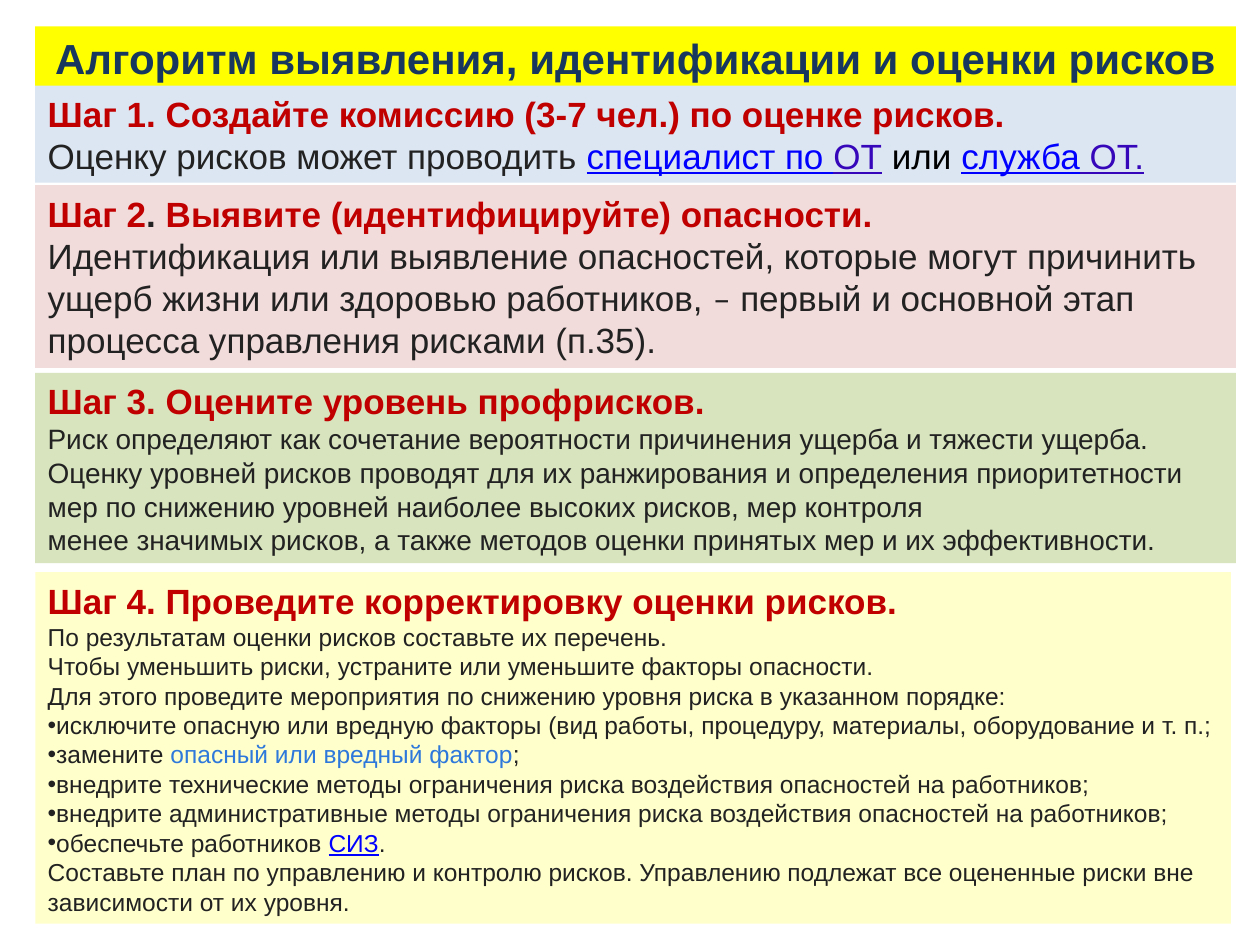
"""Build a slide listing the four steps of occupational risk assessment."""
from lxml import etree
from pptx import Presentation
from pptx.dml.color import RGBColor
from pptx.enum.shapes import MSO_SHAPE
from pptx.enum.text import MSO_ANCHOR, MSO_AUTO_SIZE, PP_ALIGN
from pptx.oxml.ns import qn
from pptx.util import Inches, Pt

RECT = MSO_SHAPE.RECTANGLE
MIDDLE = MSO_ANCHOR.MIDDLE
GROW = MSO_AUTO_SIZE.SHAPE_TO_FIT_TEXT
LEFT, CENTER = PP_ALIGN.LEFT, PP_ALIGN.CENTER

BASE = {"name": "Arial", "bold": False, "underline": False, "color": "222222"}
TITLE = {"size": Pt(24), "bold": True, "color": "17375E"}
HEAD = {"size": Pt(20), "bold": True, "color": "C00000"}
HEAD_DOT = {**HEAD, "color": "222222"}
BIG = {"size": Pt(20)}
BLACK = {**BIG, "color": "000000"}
DASH = {**BIG, "name": "Calibri"}
LINK = {**BIG, "color": "0000FF", "underline": True}
VISITED = {**LINK, "color": "3506BA"}
MEDIUM = {"size": Pt(16)}
SMALL = {"size": Pt(14)}
SMALL_BLUE = {**SMALL, "color": "2D78DA"}
SMALL_LINK = {**LINK, **SMALL}

TITLE_TEXT = [[("Алгоритм выявления, идентификации и оценки рисков", TITLE)]]
STEP_1 = [
    [("Шаг 1. Создайте комиссию (3-7 чел.) по оценке рисков.", HEAD)],
    [("Оценку рисков может проводить ", BIG), ("специалист по ", LINK), ("ОТ", VISITED),
     (" или ", BLACK), ("служба", LINK), (" ОТ.", VISITED)],
]
STEP_2 = [
    [("Шаг 2", HEAD), (". ", HEAD_DOT), ("Выявите (идентифицируйте) опасности.", HEAD)],
    [("Идентификация или выявление опасностей, которые могут причинить "
      "ущерб жизни или здоровью работников, ", BIG), ("–", DASH),
     (" первый и основной этап процесса управления рисками (п.35).", BIG)],
]
STEP_3 = [
    [("Шаг 3. Оцените уровень профрисков.", HEAD)],
    [("Риск определяют как сочетание вероятности причинения ущерба и тяжести ущерба.", MEDIUM)],
    [("Оценку уровней рисков проводят для их ранжирования и определения приоритетности "
      "мер по снижению уровней наиболее высоких рисков, мер контроля", MEDIUM)],
    [("менее значимых рисков, а также методов оценки принятых мер и их эффективности.", MEDIUM)],
]
STEP_4 = [
    [("Шаг 4. Проведите корректировку оценки рисков.", HEAD)],
    [("По результатам оценки рисков составьте их перечень.", SMALL)],
    [("Чтобы уменьшить риски, устраните или уменьшите факторы опасности.", SMALL)],
    [("Для этого проведите мероприятия по снижению уровня риска в указанном порядке:", SMALL)],
    [("исключите опасную или вредную факторы (вид работы, процедуру, материалы, "
      "оборудование и т. п.;", SMALL)],
    [("замените ", SMALL), ("опасный или вредный фактор", SMALL_BLUE), (";", SMALL)],
    [("внедрите технические методы ограничения риска воздействия опасностей "
      "на работников;", SMALL)],
    [("внедрите административные методы ограничения риска воздействия опасностей "
      "на работников;", SMALL)],
    [("обеспечьте работников ", SMALL), ("СИЗ", SMALL_LINK), (".", SMALL)],
    [("Составьте план по управлению и контролю рисков. Управлению подлежат "
      "все оцененные риски вне зависимости от их уровня.", SMALL)],
]

# top, width, height, fill, alignment, paragraphs, bulleted paragraphs
BANDS = [
    (0.21, 9.53, 0.5, "FFFF00", CENTER, TITLE_TEXT, ()),
    (1.47, 9.53, 1.45, "F2DCDB", LEFT, STEP_2, ()),
    (2.96, 9.53, 1.51, "D7E4BD", LEFT, STEP_3, ()),
    (4.54, 9.49, 2.79, "FFFFCC", LEFT, STEP_4, range(4, 9)),
    (0.68, 9.53, 0.77, "DCE6F2", LEFT, STEP_1, ()),
]


def paint(color, value):
    color.rgb = RGBColor.from_string(value)


def add_bullet(p):
    pPr = p._p.get_or_add_pPr()
    etree.SubElement(pPr, qn("a:buFont")).set("typeface", "Arial")
    etree.SubElement(pPr, qn("a:buChar")).set("char", "•")


prs = Presentation()
prs.slide_width, prs.slide_height = Inches(10), Inches(7.5)
s = prs.slides.add_slide(prs.slide_layouts[6])

for top, width, height, fill, align, paragraphs, bulleted in BANDS:
    sp = s.shapes.add_shape(RECT, Inches(0.28), Inches(top), Inches(width), Inches(height))
    sp.shadow.inherit = False
    sp.fill.solid()
    paint(sp.fill.fore_color, fill)
    sp.line.fill.background()
    tf = sp.text_frame
    tf.word_wrap = True
    tf.auto_size = GROW
    tf.vertical_anchor = MIDDLE
    for i, runs in enumerate(paragraphs):
        p = tf.add_paragraph() if i else tf.paragraphs[0]
        p.alignment = align
        if i in bulleted:
            add_bullet(p)
        for text, style in runs:
            r = p.add_run()
            r.text = text
            for key, value in {**BASE, **style}.items():
                if key == "color":
                    paint(r.font.color, value)
                else:
                    setattr(r.font, key, value)

prs.save("out.pptx")
